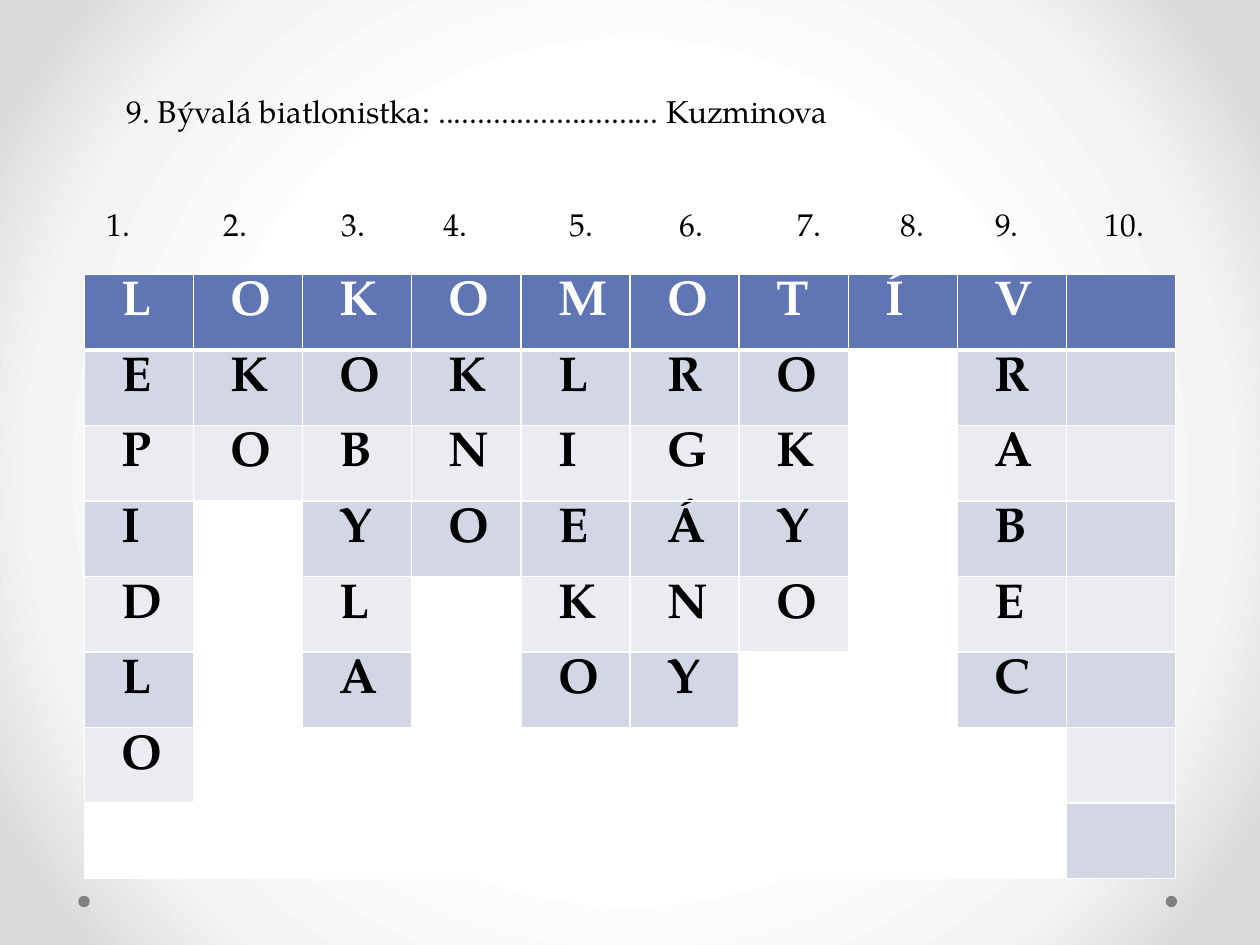
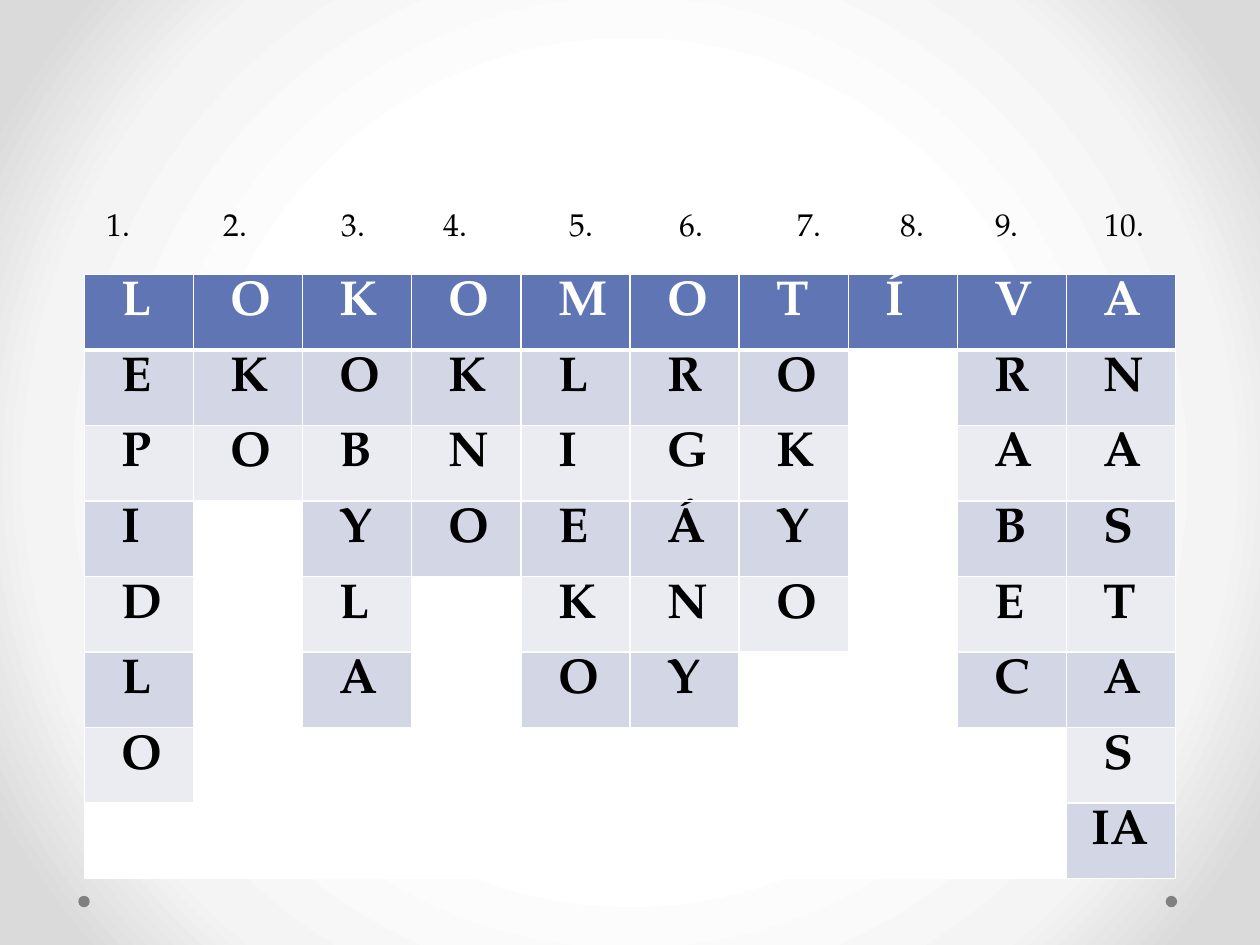
"""Build the crossword slides."""
import lxml.etree
import pptx
import pptx.dml.color
import pptx.enum.shapes
import pptx.oxml.ns
import pptx.util

Cm = pptx.util.Cm
Pt = pptx.util.Pt
qn = pptx.oxml.ns.qn

COLOURS = {
    "white": "FFFFFF",
    "mist": "F4F4F4",
    "silver": "DADADA",
    "dot": "808080",
    "header": "6076B4",
    "band_dark": "D2D6E5",
    "band_light": "EAECF2",
    "ink": "000000",
}
BODY = {"name": "TeX Gyre Pagella", "size": Pt(18), "bold": False}
LETTER = {**BODY, "size": Pt(28), "bold": True}

WORDS = [
    list("LEPIDLO"), list("OKO"), list("KOBYLA"), list("OKNO"), list("MLIEKO"),
    list("ORGÁNY"), list("TOKYO"), list("Í"), list("VRABEC"), [*"ANASTAS", "IA"],
]
ROW_COUNT = max(len(word) for word in WORDS)
NUMBER_STOPS = [2.36, 4.74, 6.79, 9.33, 11.55, 13.93, 16.01, 17.91, 20.12]
NUMBERS = "\t".join(f"{number}." for number in range(1, len(WORDS) + 1))
CLUE = "9. Bývalá biatlonistka: ............................ Kuzminova"


def rgb(colour):
    """Return the named colour."""
    return pptx.dml.color.RGBColor.from_string(COLOURS[colour])


class CrosswordDeck:
    """Hold the presentation, its style and the current slide."""

    def __init__(self):
        """Set the slide size and the shared background."""
        self.presentation = pptx.Presentation()
        self.presentation.slide_width = Cm(25.4)
        self.presentation.slide_height = Cm(19.05)
        self.slide = None
        self.set_background()

    def set_background(self):
        """Give the master a circular gradient."""
        master = self.presentation.slide_master
        master.background.fill.gradient()
        gradient = master.element.find(".//" + qn("a:gradFill"))
        for child in list(gradient):
            gradient.remove(child)
        stops = lxml.etree.SubElement(gradient, qn("a:gsLst"))
        for position, colour in ((50, "white"), (76, "mist"), (92, "silver")):
            stop = lxml.etree.SubElement(stops, qn("a:gs"), pos=str(position * 1000))
            lxml.etree.SubElement(stop, qn("a:srgbClr"), val=COLOURS[colour])
        circle = lxml.etree.SubElement(gradient, qn("a:path"), path="circle")
        sides = dict.fromkeys("ltrb", "50000")
        lxml.etree.SubElement(circle, qn("a:fillToRect"), **sides)

    def add_slide(self):
        """Start a slide with its two corner dots."""
        layout = self.presentation.slide_layouts[6]
        self.slide = self.presentation.slides.add_slide(layout)
        for left in (23.5, 1.58):
            self.add_dot(left, 18.06)

    def add_dot(self, left, top):
        """Draw a small grey dot."""
        shape = self.slide.shapes.add_shape(
            pptx.enum.shapes.MSO_SHAPE.OVAL, Cm(left), Cm(top), Cm(0.23), Cm(0.23))
        shape.shadow.inherit = False
        shape.fill.solid()
        shape.fill.fore_color.rgb = rgb("dot")
        shape.line.fill.background()

    def add_run(self, paragraph, text, style, colour):
        """Add a formatted run to a paragraph."""
        run = paragraph.add_run()
        run.text = text
        for attribute, value in style.items():
            setattr(run.font, attribute, value)
        run.font.color.rgb = rgb(colour)

    def add_text(self, text, left, top, width, stops=()):
        """Add one line of text with optional tab stops."""
        box = self.slide.shapes.add_textbox(Cm(left), Cm(top), Cm(width), Cm(1.02))
        box.text_frame.word_wrap = True
        paragraph = box.text_frame.paragraphs[0]
        self.add_run(paragraph, text, BODY, "ink")
        if stops:
            properties = paragraph._p.get_or_add_pPr()
            tabs = lxml.etree.SubElement(properties, qn("a:tabLst"))
            for stop in stops:
                lxml.etree.SubElement(tabs, qn("a:tab"), pos=str(Cm(stop)), algn="l")

    def set_borders(self, cell, row):
        """Draw white cell borders, thick below the header."""
        widths = {"L": 1, "R": 1, "T": 3 if row == 1 else 1, "B": 3 if row == 0 else 1}
        properties = cell._tc.get_or_add_tcPr()
        for index, (side, width) in enumerate(widths.items()):
            line = lxml.etree.Element(qn(f"a:ln{side}"), w=str(Pt(width)))
            fill = lxml.etree.SubElement(line, qn("a:solidFill"))
            lxml.etree.SubElement(fill, qn("a:srgbClr"), val=COLOURS["white"])
            properties.insert(index, line)

    def add_crossword(self, solved):
        """Add the grid with the first solved words filled in."""
        table = self.slide.shapes.add_table(
            ROW_COUNT, len(WORDS), Cm(1.7), Cm(5.53),
            Cm(2.2 * len(WORDS)), Cm(12.19)).table
        table.first_row = table.horz_banding = False
        for column, word in enumerate(WORDS):
            for row in range(ROW_COUNT):
                cell = table.cell(row, column)
                used = row < len(word)
                band = "header" if row == 0 else "band_dark" if row % 2 else "band_light"
                cell.fill.solid()
                cell.fill.fore_color.rgb = rgb(band if used else "white")
                self.set_borders(cell, row)
                if used and column < solved:
                    letter = word[row]
                    cell.margin_left = Cm(0.75 if len(letter) == 1 else 0.5)
                    self.add_run(cell.text_frame.paragraphs[0], letter, LETTER,
                                 "ink" if row else "white")


def main():
    """Build both slides and save them."""
    deck = CrosswordDeck()
    for solved, clue in ((9, CLUE), (10, None)):
        deck.add_slide()
        deck.add_crossword(solved)
        deck.add_text(NUMBERS, 1.9, 4.01, 21.51, NUMBER_STOPS)
        if clue:
            deck.add_text(clue, 2.3, 1.73, 15.2)
    deck.presentation.save("out.pptx")


if __name__ == "__main__":
    main()
